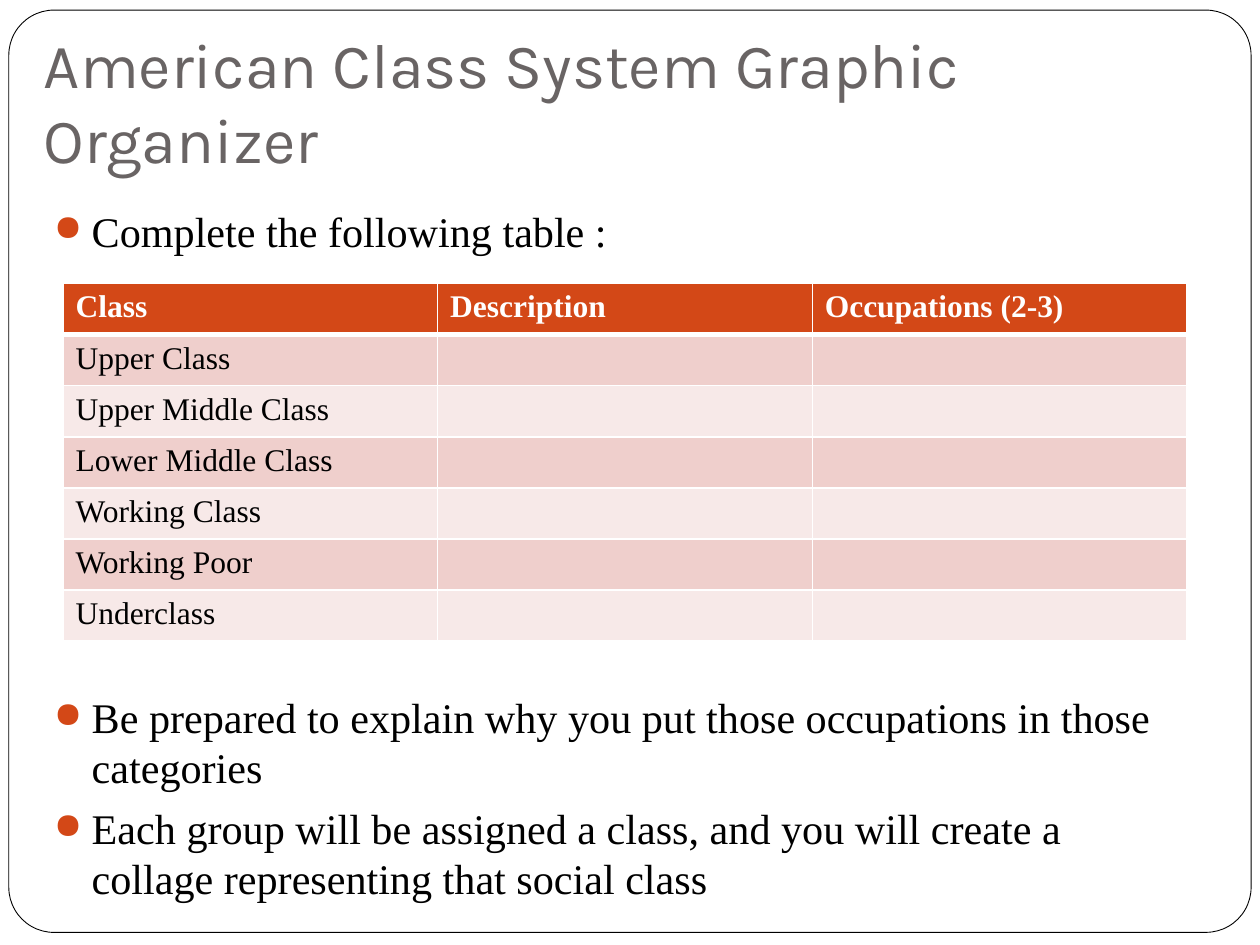
from lxml.etree import SubElement
from pptx import Presentation
from pptx.dml.color import RGBColor
from pptx.enum.shapes import MSO_SHAPE
from pptx.enum.text import MSO_ANCHOR
from pptx.oxml.ns import qn
from pptx.util import Inches, Pt

COLORS = {
    "white": "FFFFFF",
    "black": "000000",
    "title": "696464",
    "accent": "D34817",
    "band_dark": "EFCFCC",
    "band_light": "F7E9E8",
}
TABLE_ROWS = [
    ["Class", "Description", "Occupations (2-3)"],
    ["Upper Class"],
    ["Upper Middle Class"],
    ["Lower Middle Class"],
    ["Working Class"],
    ["Working Poor"],
    ["Underclass"],
]
# Each bullet with its space before; the second one clears the table.
BULLETS = [
    ("Complete the following table :", 0),
    ("Be prepared to explain why you put those occupations in those categories", 249),
    ("Each group will be assigned a class, and you will create a collage "
     "representing that social class", 5.8),
]


def rgb(name):
    return RGBColor.from_string(COLORS[name])


def write(p, text, *, size, font="Times New Roman", color="black", bold=False):
    r = p.add_run()
    r.text = text
    r.font.name = font
    r.font.size = Pt(size)
    r.font.bold = bold
    r.font.color.rgb = rgb(color)


def add_bullet(p, indent=0.3):
    pPr = p._p.get_or_add_pPr()
    pPr.set("marL", str(Inches(indent)))
    pPr.set("indent", str(-Inches(indent)))
    color = SubElement(pPr, qn("a:buClr"))
    SubElement(color, qn("a:srgbClr"), val=COLORS["accent"])
    SubElement(pPr, qn("a:buSzPct"), val="85000")
    SubElement(pPr, qn("a:buChar"), char="●")


def set_borders(cell, bottom):
    """Draw white cell borders; must run before the cell is filled."""
    tcPr = cell._tc.get_or_add_tcPr()
    for side, width in (("L", 1), ("R", 1), ("T", 1), ("B", bottom)):
        ln = SubElement(tcPr, qn(f"a:ln{side}"), w=str(Pt(width)))
        fill = SubElement(ln, qn("a:solidFill"))
        SubElement(fill, qn("a:srgbClr"), val=COLORS["white"])


class SlideBuilder:
    def __init__(self, slide):
        self.slide = slide

    def frame(self, *box):
        sp = self.slide.shapes.add_shape(MSO_SHAPE.ROUNDED_RECTANGLE, *map(Inches, box))
        sp.adjustments[0] = 0.049
        sp.shadow.inherit = False
        sp.fill.solid()
        sp.fill.fore_color.rgb = rgb("white")
        sp.line.color.rgb = rgb("black")
        sp.line.width = Pt(0.5)

    def text_frame(self, *box):
        tf = self.slide.shapes.add_textbox(*map(Inches, box)).text_frame
        tf.word_wrap = True
        return tf

    def title(self, text, *box):
        tf = self.text_frame(*box)
        tf.vertical_anchor = MSO_ANCHOR.BOTTOM
        tf.margin_bottom = Inches(0.1)
        write(tf.paragraphs[0], text, size=36, font="Karla", color="title")

    def bullets(self, items, *box):
        tf = self.text_frame(*box)
        for i, (text, space) in enumerate(items):
            p = tf.add_paragraph() if i else tf.paragraphs[0]
            p.line_spacing = Pt(28.8)
            p.space_before = Pt(space)
            add_bullet(p)
            write(p, text, size=24.1)

    def table(self, rows, *box):
        n_cols = len(rows[0])
        shape = self.slide.shapes.add_table(len(rows), n_cols, *map(Inches, box))
        for i, row in enumerate(rows):
            header = i == 0
            band = "accent" if header else "band_dark" if i % 2 else "band_light"
            for j in range(n_cols):
                cell = shape.table.cell(i, j)
                set_borders(cell, bottom=3 if header else 1)
                cell.fill.solid()
                cell.fill.fore_color.rgb = rgb(band)
                if j < len(row):
                    write(cell.text_frame.paragraphs[0], row[j], size=18,
                          color="white" if header else "black", bold=header)


def main():
    prs = Presentation()
    prs.slide_width, prs.slide_height = Inches(10), Inches(7.5)
    s = SlideBuilder(prs.slides.add_slide(prs.slide_layouts[6]))
    s.frame(0.07, 0.08, 9.86, 7.32)
    s.title("American Class System Graphic Organizer", 0.25, 0.25, 9.17, 1.25)
    s.bullets(BULLETS, 0.33, 1.58, 9.17, 5.58)
    s.table(TABLE_ROWS, 0.5, 2.25, 8.92, 2.84)
    prs.save("out.pptx")


if __name__ == "__main__":
    main()
